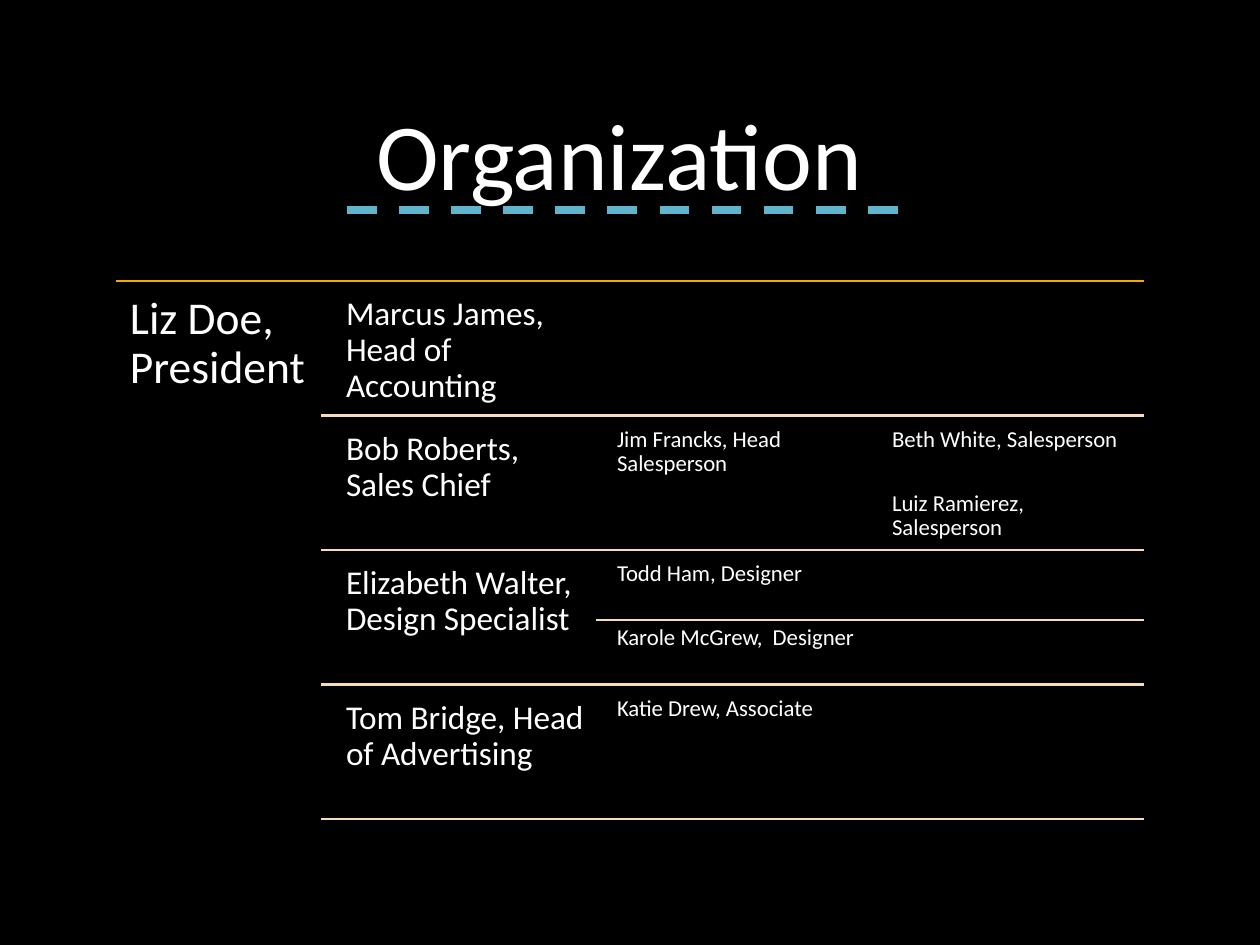
from lxml.etree import SubElement
from pptx import Presentation
from pptx.dml.color import RGBColor
from pptx.enum.dml import MSO_LINE
from pptx.enum.shapes import MSO_CONNECTOR
from pptx.enum.text import MSO_ANCHOR, PP_ALIGN
from pptx.oxml.ns import qn
from pptx.util import Emu, Pt

EMU_PER_PX = 914400 / 126
COLORS = {"background": "000000", "text": "FFFFFF", "dash": "60B5CC",
          "top_rule": "F0AD00", "rule": "F8DBBD"}
FONT = "Calibri"

CHART_LEFT, CHART_RIGHT, CHART_TOP = 116, 1144, 281
HEAD_LEFT, STAFF_LEFT = 321, 596
COLUMN_PITCH, COLUMN_WIDTH = 275, 258
ROW_PITCH, ROW_HEIGHT, HALF_ROW = 134.5, 129, 64
INDENT, ROW_GAP = 15, 6

DEPARTMENTS = [
    ("Marcus James, Head of Accounting", []),
    ("Bob Roberts, Sales Chief", [
        (0, 0, "Jim Francks, Head Salesperson"),
        (1, 0, "Beth White, Salesperson"),
        (1, 1, "Luiz Ramierez, Salesperson")]),
    ("Elizabeth Walter, Design Specialist", [
        (0, 0, "Todd Ham, Designer"),
        (0, 1, "Karole McGrew,  Designer")]),
    ("Tom Bridge, Head of Advertising", [
        (0, 0, "Katie Drew, Associate")]),
]


def px(length):
    return Emu(round(length * EMU_PER_PX))


def rgb(name):
    return RGBColor.from_string(COLORS[name])


def write_text(frame, text, *, size, color="text", align=PP_ALIGN.LEFT,
               anchor=MSO_ANCHOR.TOP, spacing=None, inset=None):
    frame.word_wrap = True
    frame.vertical_anchor = anchor
    if inset is not None:
        frame.margin_left = frame.margin_right = px(inset)
        frame.margin_top = frame.margin_bottom = px(inset)
    paragraph = frame.paragraphs[0]
    paragraph.alignment = align
    paragraph.line_spacing = spacing
    run = paragraph.add_run()
    run.text = text
    run.font.name = FONT
    run.font.size = Pt(size)
    run.font.color.rgb = rgb(color)


class OrgSlide:
    def __init__(self, deck):
        self.slide = deck.slides.add_slide(deck.slide_layouts[5])
        fill = self.slide.background.fill
        fill.solid()
        fill.fore_color.rgb = rgb("background")

    def title(self, text, left, top, width, height):
        heading = self.slide.shapes.title
        heading.left, heading.top = px(left), px(top)
        heading.width, heading.height = px(width), px(height)
        write_text(heading.text_frame, text, size=54, align=PP_ALIGN.CENTER,
                   anchor=MSO_ANCHOR.MIDDLE)

    def rule(self, left, right, y, color="rule", weight=1.5, dash=None):
        rule = self.slide.shapes.add_connector(
            MSO_CONNECTOR.STRAIGHT, px(left), px(y), px(right), px(y))
        rule.line.color.rgb = rgb(color)
        rule.line.width = Pt(weight)
        if dash is not None:
            rule.line.dash_style = dash
        SubElement(rule._element.spPr, qn("a:effectLst"))

    def person(self, text, left, top, width, height, size, inset):
        box = self.slide.shapes.add_textbox(
            px(left), px(top), px(width), px(height))
        write_text(box.text_frame, text, size=size, spacing=0.9, inset=inset)


def main():
    deck = Presentation()
    deck.slide_width, deck.slide_height = px(1260), px(945)
    org = OrgSlide(deck)

    org.rule(347, 914, 210, "dash", 4.25, MSO_LINE.DASH)
    org.title("Organization", 73, 53, 1092, 199)
    org.rule(CHART_LEFT, CHART_RIGHT, CHART_TOP, "top_rule")
    org.person("Liz Doe, President", CHART_LEFT, CHART_TOP,
               HEAD_LEFT - CHART_LEFT, 544, 26, 14)

    for row, (head, staff) in enumerate(DEPARTMENTS):
        top = CHART_TOP + row * ROW_PITCH + ROW_GAP
        org.person(head, HEAD_LEFT + INDENT, top, COLUMN_WIDTH, ROW_HEIGHT,
                   19, 10)
        for column, half, name in staff:
            shared = sum(other == column for other, _, _ in staff) > 1
            org.person(name, STAFF_LEFT + INDENT + column * COLUMN_PITCH,
                       top + half * HALF_ROW, COLUMN_WIDTH,
                       HALF_ROW if shared else ROW_HEIGHT, 13, 6)
            if column == 0 and half == 1:
                org.rule(STAFF_LEFT, CHART_RIGHT, top + HALF_ROW)
        org.rule(HEAD_LEFT, CHART_RIGHT, CHART_TOP + (row + 1) * ROW_PITCH)

    deck.save("out.pptx")


if __name__ == "__main__":
    main()
